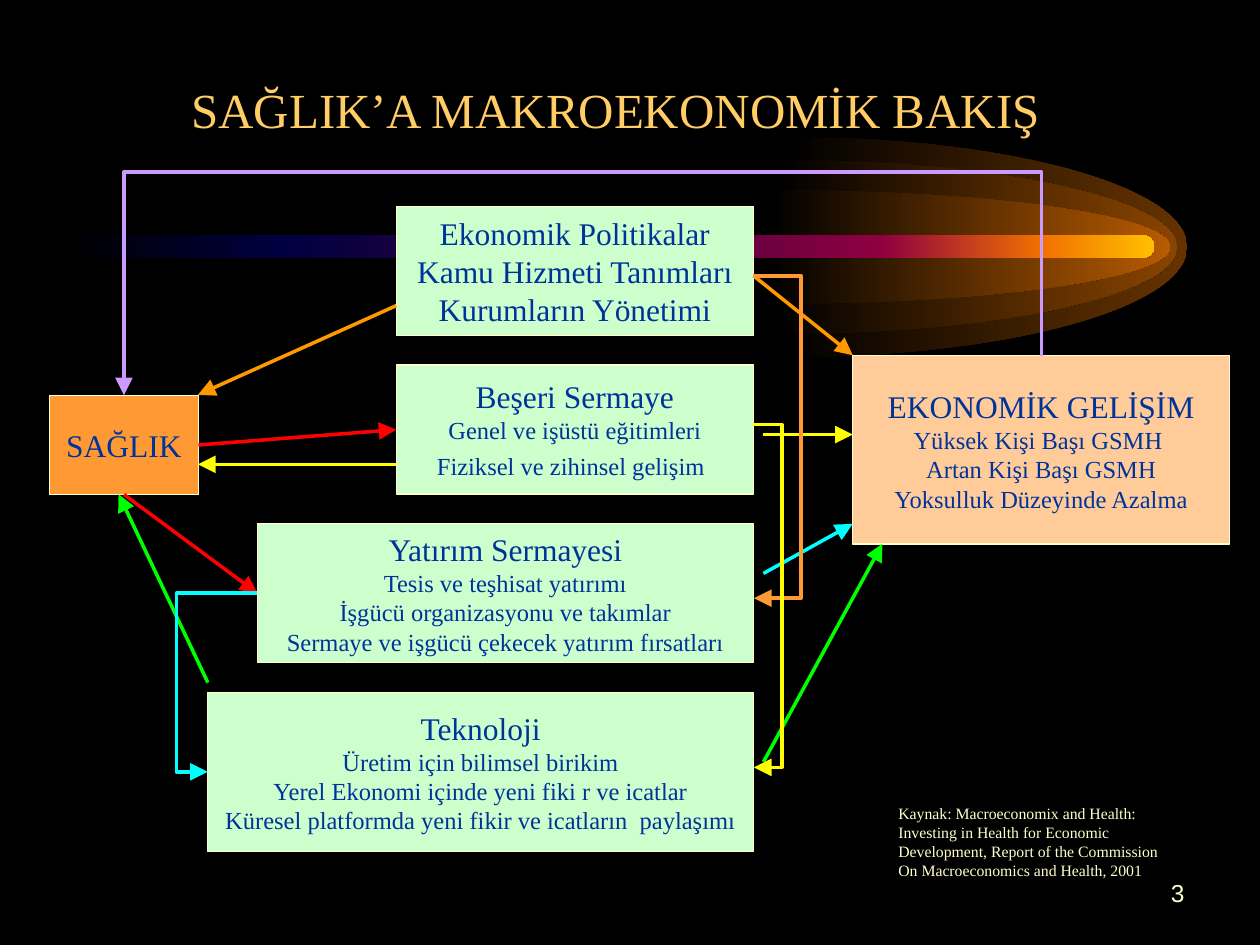
from lxml.etree import SubElement
from pptx import Presentation
from pptx.dml.color import RGBColor
from pptx.enum.shapes import MSO_CONNECTOR as Link, MSO_SHAPE as Preset
from pptx.enum.text import MSO_ANCHOR as Anchor, PP_ALIGN as Align
from pptx.oxml.ns import qn
from pptx.util import Cm, Pt

BLACK = RGBColor(0x00, 0x00, 0x00)
GOLD = RGBColor(0xFF, 0xCC, 0x66)
CREAM = RGBColor(0xFF, 0xFF, 0xCC)
NAVY = RGBColor(0x00, 0x33, 0x99)
MINT = RGBColor(0xCC, 0xFF, 0xCC)
PEACH = RGBColor(0xFF, 0xCC, 0x99)
ORANGE = RGBColor(0xFF, 0x99, 0x33)
AMBER = RGBColor(0xFF, 0x99, 0x00)
YELLOW = RGBColor(0xFF, 0xFF, 0x00)
CYAN = RGBColor(0x00, 0xFF, 0xFF)
GREEN = RGBColor(0x00, 0xFF, 0x00)
RED = RGBColor(0xFF, 0x00, 0x00)
LILAC = RGBColor(0xCC, 0x99, 0xFF)
SERIF, SANS = "Times New Roman", "Arial"
HEAD, BODY = 18, 14

TITLE = "SAĞLIK’A MAKROEKONOMİK BAKIŞ"
SOURCE = ("Kaynak: Macroeconomix and Health: Investing in Health for Economic "
          "Development, Report of the Commission On Macroeconomics and Health, 2001")
PAGE = "3"

# All places below are in centimetres.
# key: (left, top, width, height), fill, paragraphs of (text, size) runs
BOXES = {
    "health": ((1, 7.97, 3, 2), ORANGE, [[("SAĞLIK", HEAD)]]),
    "growth": ((17.19, 7.17, 7.6, 3.8), PEACH, [
        [("EKONOMİK GELİŞİM", HEAD)],
        [("Yüksek Kişi Başı GSMH ", BODY)],
        [("Artan Kişi Başı GSMH", BODY)],
        [("Yoksulluk Düzeyinde Azalma", BODY)]]),
    "policy": ((7.99, 4.16, 7.2, 2.6), MINT, [
        [("Ekonomik Politikalar", HEAD)],
        [("Kamu Hizmeti Tanımları", HEAD)],
        [("Kurumların Yönetimi", HEAD)]]),
    "human": ((7.99, 7.36, 7.2, 2.6), MINT, [
        [("Beşeri Sermaye", HEAD)],
        [("Genel ve işüstü eğitimleri", BODY)],
        [("Fiziksel ve zihinsel gelişim", BODY), (" ", HEAD)]]),
    "technology": ((4.19, 13.96, 11, 3.2), MINT, [
        [("Teknoloji", HEAD)],
        [("Üretim için bilimsel birikim", BODY)],
        [("Yerel Ekonomi içinde yeni fiki r ve icatlar", BODY)],
        [("Küresel platformda yeni fikir ve icatların  paylaşımı", BODY)]]),
    "investment": ((5.19, 10.56, 10, 2.8), MINT, [
        [("Yatırım Sermayesi", HEAD)],
        [("Tesis ve teşhisat yatırımı", BODY)],
        [("İşgücü organizasyonu ve takımlar", BODY)],
        [("Sermaye ve işgücü çekecek yatırım fırsatları", BODY)]]),
}
ARROWS = [  # start, end, colour
    ((15.39, 8.76), (17.19, 8.76), YELLOW),
    ((15.39, 11.56), (17.19, 10.56), CYAN),
    ((15.19, 5.56), (17.19, 7.16), AMBER),
    ((15.39, 15.36), (17.79, 10.96), GREEN),
    ((7.99, 6.16), (3.99, 7.96), AMBER),
    ((7.99, 9.36), (3.99, 9.36), YELLOW),
    ((4.19, 13.76), (2.39, 9.96), GREEN),
]
JOINED_ARROWS = [  # box and side, box and side, colour
    (("health", 2), ("investment", 1), RED),
    (("health", 3), ("human", 1), RED),
]
SIDE_ROUTES = [  # start, end, x of the vertical stretch, colour
    ((15.19, 5.56), (15.19, 12.06), 16.15, ORANGE),
    ((15.19, 8.56), (15.19, 15.47), 15.76, YELLOW),
    ((5.19, 11.96), (4.19, 15.56), 3.56, CYAN),
]
FEEDBACK = ((21, 7.17), (2.5, 7.97), 3.47, LILAC)  # y of the level stretch

GLOW_Y, GLOW_REACH = 4.98, 8.08
GLOWS = [(15.85, 2.22, "663300"), (15.65, 1.76, "894400"), (15.52, 1.15, "B75B00")]
ROUND = 0.55  # handle length that makes a cubic curve a quarter ellipse
COMET = (1.27, 4.74, 22, 0.46)
COMET_STOPS = [(0, "000000"), (20, "000040"), (50, "400040"),
               (75, "8F0040"), (90, "F27300"), (100, "FFBF00")]

prs = Presentation()
prs.slide_width, prs.slide_height = Cm(25.4), Cm(19.05)
slide = prs.slides.add_slide(prs.slide_layouts[5])
slide.background.fill.solid()
slide.background.fill.fore_color.rgb = BLACK
shapes = slide.shapes


def cm(values):
    return [Cm(v) for v in values]


def add_half_ellipse(left, middle, reach, ry):
    """Right half of an ellipse, as two cubic curves."""
    upper = [(ROUND, -1), (1, -ROUND), (1, 0)]
    lower = [(1, ROUND), (ROUND, 1), (0, 1)]
    builder = shapes.build_freeform(Cm(left), Cm(middle - ry))
    builder.add_line_segments(
        [cm((left + reach * x, middle + ry * y)) for x, y in upper + lower], close=True)
    shape = builder.convert_to_shape()
    outline = next(shape._element.iter(qn("a:path")))
    lines = outline.findall(qn("a:lnTo"))
    for first in (0, 3):
        curve = SubElement(outline, qn("a:cubicBezTo"))
        for line in lines[first:first + 3]:
            curve.append(line[0])
            outline.remove(line)
    outline.append(outline.find(qn("a:close")))
    return shape


def paint_gradient(shape, stops):
    """Left-to-right gradient without outline."""
    shape.shadow.inherit = False
    shape.line.fill.background()
    shape.fill.gradient()
    shape.fill.gradient_angle = 0
    stop_list = next(shape._element.iter(qn("a:gsLst")))
    for old in list(stop_list):
        stop_list.remove(old)
    for percent, colour in stops:
        stop = SubElement(stop_list, qn("a:gs"), pos=str(percent * 1000))
        SubElement(stop, qn("a:srgbClr"), val=colour)


def write(frame, paragraphs, colour, font=SERIF, align=Align.CENTER,
          anchor=Anchor.MIDDLE, wrap=False):
    frame.word_wrap = wrap
    frame.vertical_anchor = anchor
    for i, runs in enumerate(paragraphs):
        paragraph = frame.add_paragraph() if i else frame.paragraphs[0]
        paragraph.alignment = align
        for text, size in runs:
            run = paragraph.add_run()
            run.text = text
            run.font.size, run.font.name = Pt(size), font
            run.font.color.rgb = colour


def add_arrow(kind, start, end, colour):
    arrow = shapes.add_connector(kind, *cm(start + end))
    arrow.line.color.rgb = colour
    arrow.line.width = Pt(2)
    SubElement(arrow.line._get_or_add_ln(), qn("a:tailEnd"),
               type="triangle", w="lg", len="lg")
    SubElement(arrow._element.spPr, qn("a:effectLst"))
    return arrow


def set_bend(arrow, share):
    """Place the middle stretch at a share of the way from start to end."""
    guides = next(arrow._element.iter(qn("a:prstGeom"))).get_or_add_avLst()
    SubElement(guides, qn("a:gd"), name="adj1", fmla=f"val {round(share * 100000)}")


# Backdrop: half-ellipse glows and the comet bar
for left, ry, edge in GLOWS:
    glow = add_half_ellipse(left, GLOW_Y, GLOW_REACH, ry)
    paint_gradient(glow, [(0, "000000"), (100, edge)])
comet = shapes.add_shape(Preset.ROUNDED_RECTANGLE, *cm(COMET))
comet.adjustments[0] = 0.5
paint_gradient(comet, COMET_STOPS)

title = shapes.title
title.left, title.top, title.width, title.height = cm((0.58, 1, 23.65, 2.4))
write(title.text_frame, [[(TITLE, 28)]], GOLD, wrap=True)

boxes = {}
for key, (place, fill, paragraphs) in BOXES.items():
    box = boxes[key] = shapes.add_shape(Preset.RECTANGLE, *cm(place))
    box.shadow.inherit = False
    box.fill.solid()
    box.fill.fore_color.rgb = fill
    box.line.color.rgb = CREAM
    box.line.width = Pt(0.75)
    write(box.text_frame, paragraphs, NAVY)

for start, end, colour in ARROWS:
    add_arrow(Link.STRAIGHT, start, end, colour)
for (origin, out_side), (target, in_side), colour in JOINED_ARROWS:
    arrow = add_arrow(Link.STRAIGHT, (0, 0), (1, 1), colour)
    arrow.begin_connect(boxes[origin], out_side)
    arrow.end_connect(boxes[target], in_side)

for (x1, y1), (x2, y2), via_x, colour in SIDE_ROUTES:
    if x1 == x2:
        x2 += 0.01  # the bend is a share of the width, which must not be zero
    set_bend(add_arrow(Link.ELBOW, (x1, y1), (x2, y2), colour),
             (via_x - x1) / (x2 - x1))

# The feedback route leaves upwards: an elbow drawn on its side, then turned
(x1, y1), (x2, y2), via_y, colour = FEEDBACK
mid_x, mid_y = (x1 + x2) / 2, (y1 + y2) / 2
half_w, half_h = (y2 - y1) / 2, (x1 - x2) / 2
feedback = add_arrow(Link.ELBOW, (mid_x + half_w, mid_y + half_h),
                     (mid_x - half_w, mid_y - half_h), colour)
feedback._element.spPr.find(qn("a:xfrm")).set("rot", str(270 * 60000))
set_bend(feedback, (via_y - y1) / (y2 - y1))

source = shapes.add_textbox(*cm((17.86, 16.08, 6, 1.8)))
write(source.text_frame, [[(SOURCE, 9)]], CREAM, align=Align.LEFT,
      anchor=Anchor.TOP, wrap=True)
page = shapes.add_textbox(*cm((18.2, 17.36, 5.93, 1.27)))
write(page.text_frame, [[(PAGE, 14)]], CREAM, SANS, Align.RIGHT, wrap=True)

prs.save("out.pptx")
